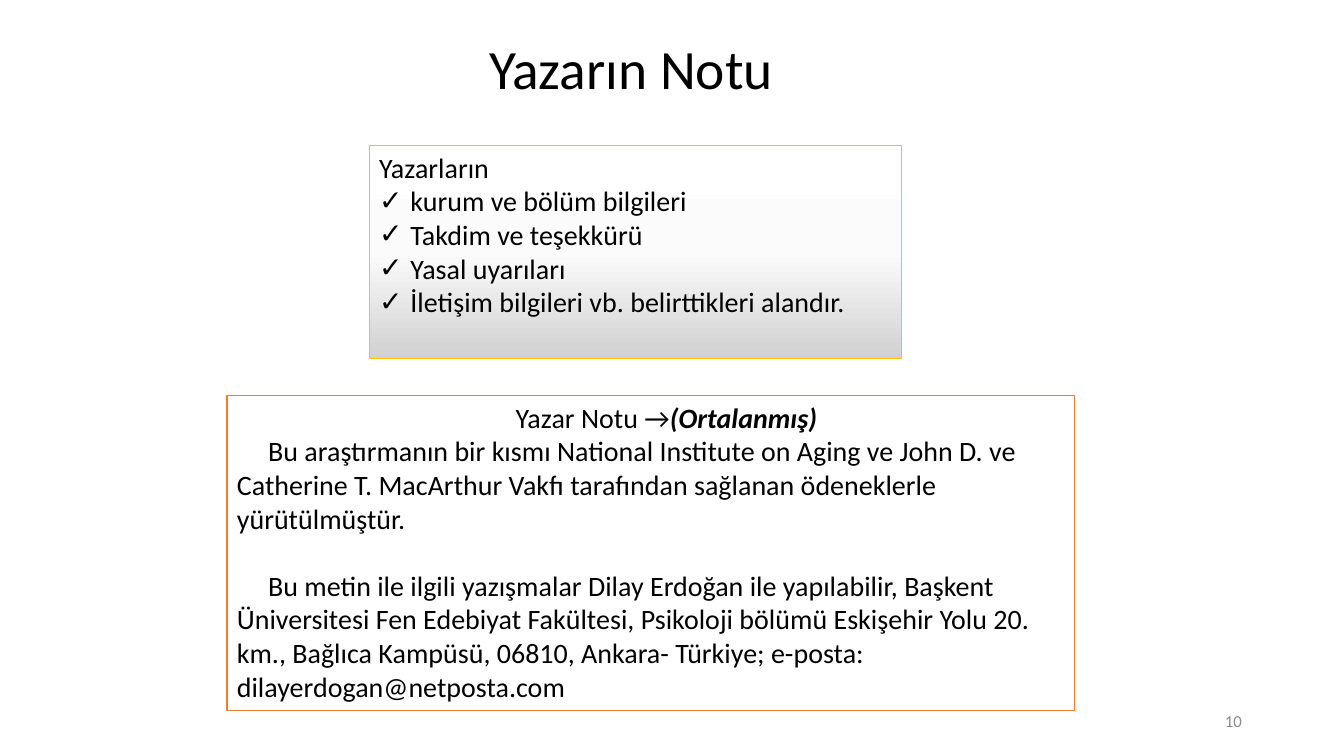
from dataclasses import dataclass

from copy import deepcopy
from lxml import etree
from pptx import Presentation
from pptx.dml.color import RGBColor
from pptx.enum.shapes import MSO_SHAPE
from pptx.enum.text import MSO_ANCHOR, MSO_AUTO_SIZE, PP_ALIGN
from pptx.oxml.ns import qn
from pptx.util import Cm, Pt

# Content
TITLE = "Yazarın Notu"
CHECKLIST_LEAD = "Yazarların"
CHECKLIST = [
    "kurum ve bölüm bilgileri",
    "Takdim ve teşekkürü",
    "Yasal uyarıları",
    "İletişim bilgileri vb. belirttikleri alandır.",
]
NOTE_HEADING = ("Yazar Notu →", "(Ortalanmış)")
NOTE_PARAGRAPHS = [
    "Bu araştırmanın bir kısmı National Institute on Aging ve John D. ve "
    "Catherine T. MacArthur Vakfı tarafından sağlanan ödeneklerle yürütülmüştür.",
    "Bu metin ile ilgili yazışmalar Dilay Erdoğan ile yapılabilir, Başkent "
    "Üniversitesi Fen Edebiyat Fakültesi, Psikoloji bölümü Eskişehir Yolu 20. "
    "km., Bağlıca Kampüsü, 06810, Ankara- Türkiye; e-posta: "
    "dilayerdogan@netposta.com",
]
PAGE_NUMBER = "10"


@dataclass(frozen=True)
class Theme:
    font: str = "Calibri"
    text: str = "000000"
    muted: str = "8C8C8C"
    paper: str = "FFFFFF"
    gold: str = "FFC000"
    orange: str = "ED7D31"
    gradient: tuple = ((0, "FFFFFF"), (0.5, "FBFBFB"), (1, "D1D1D1"))
    title_size: float = 39.6
    body_size: float = 20
    number_size: float = 12


THEME = Theme()
INDENT = Cm(0.79)
BLANK_LINE = Pt(24)

# Left, top, width, height
TITLE_BOX = (12.07, 0.86, 8.61, 1.9)
CHECKLIST_BOX = (9.3, 3.66, 13.41, 5.38)
NOTE_BOX = (5.72, 9.96, 21.36, 7.95)
NUMBER_BOX = (23.93, 17.65, 7.62, 1.02)


def place(shape, box):
    shape.left, shape.top, shape.width, shape.height = map(Cm, box)


def style(paragraph, size, color=THEME.text, align=PP_ALIGN.LEFT):
    paragraph.alignment = align
    paragraph.space_before = Pt(0)
    paragraph.font.name = THEME.font
    paragraph.font.size = Pt(size)
    paragraph.font.color.rgb = RGBColor.from_string(color)


def indent(paragraph, margin, first_line, bullet=None):
    properties = paragraph._p.get_or_add_pPr()
    properties.set("marL", str(margin))
    properties.set("indent", str(first_line))
    if bullet:
        etree.SubElement(properties, qn("a:buFont"), typeface=THEME.font)
        etree.SubElement(properties, qn("a:buChar"), char=bullet)
    else:
        etree.SubElement(properties, qn("a:buNone"))


def outline(shape, color, width):
    shape.line.color.rgb = RGBColor.from_string(color)
    shape.line.width = Pt(width)


def fill_gradient(shape):
    shape.fill.gradient()
    shape.fill.gradient_angle = 270
    stop_list = shape.fill._fill._gradFill.find(qn("a:gsLst"))
    stop_list.append(deepcopy(stop_list[-1]))
    for stop, (position, color) in zip(shape.fill.gradient_stops, THEME.gradient):
        stop.position = position
        stop.color.rgb = RGBColor.from_string(color)


def add_title(slide):
    title = slide.shapes.title
    place(title, TITLE_BOX)
    frame = title.text_frame
    frame.text = TITLE
    frame.auto_size = MSO_AUTO_SIZE.NONE
    frame.vertical_anchor = MSO_ANCHOR.MIDDLE
    style(frame.paragraphs[0], THEME.title_size)
    frame.paragraphs[0].line_spacing = 0.9


def add_checklist(slide):
    checklist = slide.placeholders[1]
    place(checklist, CHECKLIST_BOX)
    fill_gradient(checklist)
    outline(checklist, THEME.gold, 0.5)
    frame = checklist.text_frame
    frame.text = "\n".join([CHECKLIST_LEAD, *CHECKLIST])
    frame.auto_size = MSO_AUTO_SIZE.NONE
    lead, *items = frame.paragraphs
    indent(lead, 0, 0)
    for item in items:
        indent(item, INDENT, -INDENT, "✓")
    for paragraph in frame.paragraphs:
        style(paragraph, THEME.body_size)


def add_note(slide):
    note = slide.shapes.add_shape(MSO_SHAPE.RECTANGLE, *map(Cm, NOTE_BOX))
    note.shadow.inherit = False
    note.fill.solid()
    note.fill.fore_color.rgb = RGBColor.from_string(THEME.paper)
    outline(note, THEME.orange, 1)
    frame = note.text_frame
    frame.word_wrap = True
    frame.vertical_anchor = MSO_ANCHOR.TOP

    heading = frame.paragraphs[0]
    indent(heading, INDENT, 0)
    style(heading, THEME.body_size, align=PP_ALIGN.CENTER)
    label, remark = NOTE_HEADING
    heading.add_run().text = label
    emphasis = heading.add_run()
    emphasis.text = remark
    emphasis.font.bold = emphasis.font.italic = True

    for position, text in enumerate(NOTE_PARAGRAPHS):
        paragraph = frame.add_paragraph()
        paragraph.text = text
        indent(paragraph, 0, INDENT)
        style(paragraph, THEME.body_size)
        paragraph.space_before = BLANK_LINE if position else Pt(0)


def add_page_number(slide):
    number = slide.shapes.add_textbox(*map(Cm, NUMBER_BOX))
    frame = number.text_frame
    frame.word_wrap = True
    frame.vertical_anchor = MSO_ANCHOR.MIDDLE
    frame.text = PAGE_NUMBER
    style(frame.paragraphs[0], THEME.number_size, THEME.muted, PP_ALIGN.RIGHT)


def main():
    deck = Presentation()
    deck.slide_width, deck.slide_height = Cm(33.87), Cm(19.05)
    slide = deck.slides.add_slide(deck.slide_layouts[1])
    add_title(slide)
    add_checklist(slide)
    add_note(slide)
    add_page_number(slide)
    deck.save("out.pptx")


if __name__ == "__main__":
    main()
